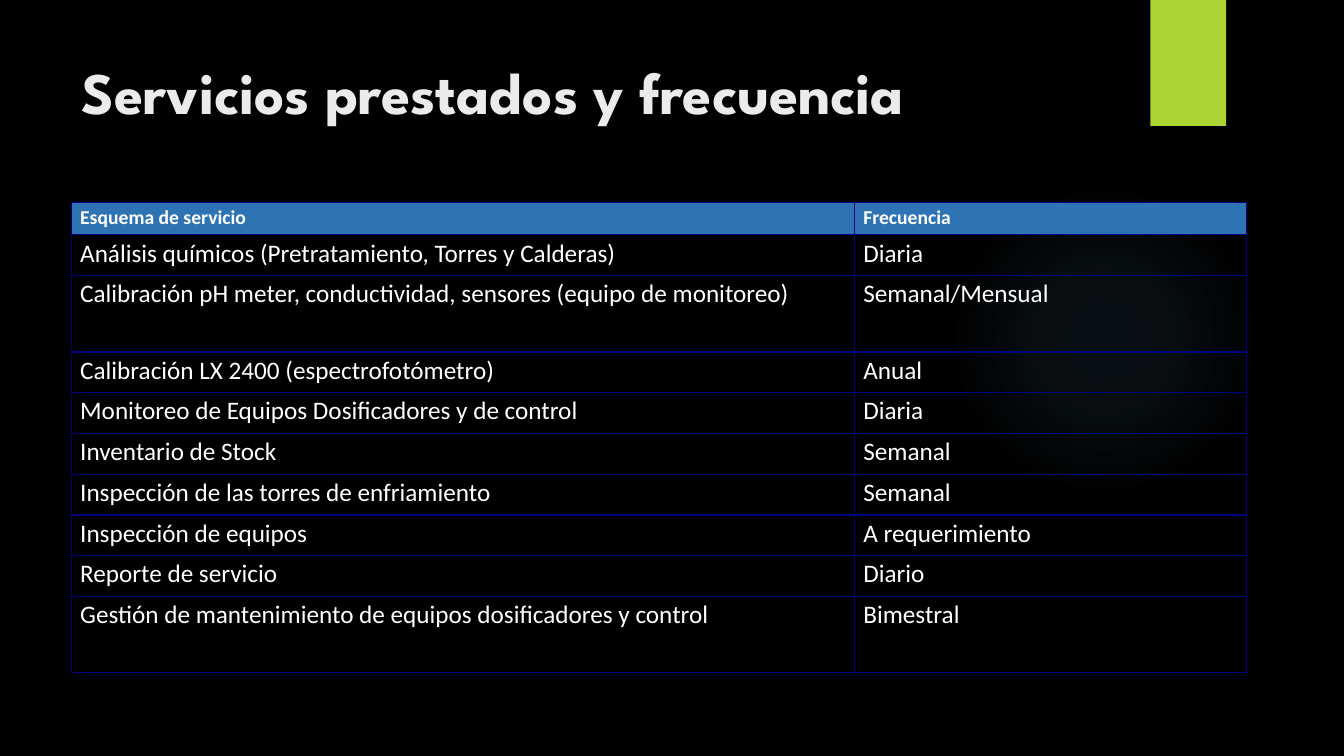
import pptx
import pptx.util
import pptx.dml.color
import pptx.enum.shapes
import pptx.enum.text
import pptx.oxml
import pptx.oxml.ns
from dataclasses import dataclass

TITLE = "Servicios prestados y frecuencia"
SERVICES = [
    ("Esquema de servicio", "Frecuencia"),
    ("Análisis químicos (Pretratamiento, Torres y Calderas)", "Diaria"),
    ("Calibración pH meter, conductividad, sensores (equipo de monitoreo)", "Semanal/Mensual"),
    ("Calibración LX 2400 (espectrofotómetro)", "Anual"),
    ("Monitoreo de Equipos Dosificadores y de control", "Diaria"),
    ("Inventario de Stock", "Semanal"),
    ("Inspección de las torres de enfriamiento", "Semanal"),
    ("Inspección de equipos", "A requerimiento"),
    ("Reporte de servicio", "Diario"),
    ("Gestión de mantenimiento de equipos dosificadores y control", "Bimestral"),
]
TALL_ROWS = (2, 9)
HEADER_HEIGHT, ROW_HEIGHT, TALL_HEIGHT = 22.9, 29.1, 54.6
COLUMN_WIDTHS = (559.4, 280.1)
GLOW_STOPS = ((0, 7), (36, 6), (69, 0))


@dataclass(frozen=True)
class Theme:
    background: str = "000000"
    title: str = "EBEBEB"
    text: str = "FFFFFF"
    accent: str = "ACD433"
    header: str = "2E74B5"
    border: str = "000080"
    glow: str = "7AC4F0"
    title_font: str = "League Spartan"
    body_font: str = "Calibri"
    title_size: int = 42
    header_size: int = 14
    body_size: int = 18


theme = Theme()
Pt = pptx.util.Pt


def paint(fill, color):
    fill.solid()
    fill.fore_color.rgb = pptx.dml.color.RGBColor.from_string(color)


def set_font(paragraph, name, size, color, bold):
    font = paragraph.font
    font.name, font.size, font.bold = name, Pt(size), bold
    font.color.rgb = pptx.dml.color.RGBColor.from_string(color)


def add_plain_shape(slide, kind, left, top, width, height, color):
    shape = slide.shapes.add_shape(kind, Pt(left), Pt(top), Pt(width), Pt(height))
    shape.shadow.inherit = False
    shape.line.fill.background()
    paint(shape.fill, color)
    return shape


def apply_glow(shape):
    stops = "".join(
        f'<a:gs pos="{position * 1000}"><a:srgbClr val="{theme.glow}">'
        f'<a:alpha val="{alpha * 1000}"/></a:srgbClr></a:gs>'
        for position, alpha in GLOW_STOPS
    )
    gradient = pptx.oxml.parse_xml(
        f'<a:gradFill {pptx.oxml.ns.nsdecls("a")}><a:gsLst>{stops}</a:gsLst>'
        '<a:path path="circle"><a:fillToRect l="50000" t="50000" r="50000" b="50000"/>'
        "</a:path></a:gradFill>"
    )
    properties = shape.element.spPr
    properties.replace(properties.find(pptx.oxml.ns.qn("a:solidFill")), gradient)


def add_borders(cell):
    properties = cell._tc.get_or_add_tcPr()
    for index, side in enumerate(("lnL", "lnR", "lnT", "lnB")):
        properties.insert(index, pptx.oxml.parse_xml(
            f'<a:{side} {pptx.oxml.ns.nsdecls("a")} w="{Pt(1)}"><a:solidFill>'
            f'<a:srgbClr val="{theme.border}"/></a:solidFill></a:{side}>'
        ))


def format_cell(cell, text, is_header):
    cell.margin_left = cell.margin_right = Pt(6.2)
    cell.margin_top, cell.margin_bottom = Pt(0.7), Pt(0)
    cell.text = text
    paragraph = cell.text_frame.paragraphs[0]
    paragraph.alignment = pptx.enum.text.PP_ALIGN.JUSTIFY
    paragraph.line_spacing = 1.07
    size = theme.header_size if is_header else theme.body_size
    set_font(paragraph, theme.body_font, size, theme.text, is_header)
    if is_header:
        paint(cell.fill, theme.header)
    else:
        cell.fill.background()
    add_borders(cell)


def add_services_table(slide):
    heights = [HEADER_HEIGHT] + [
        TALL_HEIGHT if row in TALL_ROWS else ROW_HEIGHT for row in range(1, len(SERVICES))
    ]
    table = slide.shapes.add_table(
        len(SERVICES), len(COLUMN_WIDTHS), Pt(51.1), Pt(144.9),
        Pt(sum(COLUMN_WIDTHS)), Pt(sum(heights)),
    ).table
    table.first_row = table.horz_banding = False
    for column, width in zip(table.columns, COLUMN_WIDTHS):
        column.width = Pt(width)
    for index, (row, height, texts) in enumerate(zip(table.rows, heights, SERVICES)):
        row.height = Pt(height)
        for cell, text in zip(row.cells, texts):
            format_cell(cell, text, index == 0)


def add_title(slide):
    title = slide.shapes.title
    title.left, title.top, title.width, title.height = Pt(51.1), Pt(36), Pt(740.9), Pt(110.2)
    frame = title.text_frame
    frame.text = TITLE
    frame.word_wrap = True
    frame.vertical_anchor = pptx.enum.text.MSO_ANCHOR.TOP
    paragraph = frame.paragraphs[0]
    paragraph.alignment = pptx.enum.text.PP_ALIGN.LEFT
    set_font(paragraph, theme.title_font, theme.title_size, theme.title, True)


def main():
    presentation = pptx.Presentation()
    presentation.slide_width, presentation.slide_height = Pt(960), Pt(540)
    slide = presentation.slides.add_slide(presentation.slide_layouts[5])
    paint(slide.background.fill, theme.background)
    kinds = pptx.enum.shapes.MSO_SHAPE
    apply_glow(add_plain_shape(slide, kinds.OVAL, 677.5, 131.8, 221.8, 221.8, theme.glow))
    add_plain_shape(slide, kinds.RECTANGLE, 821.8, 0, 54, 90, theme.accent)
    add_title(slide)
    add_services_table(slide)
    presentation.save("out.pptx")


if __name__ == "__main__":
    main()
